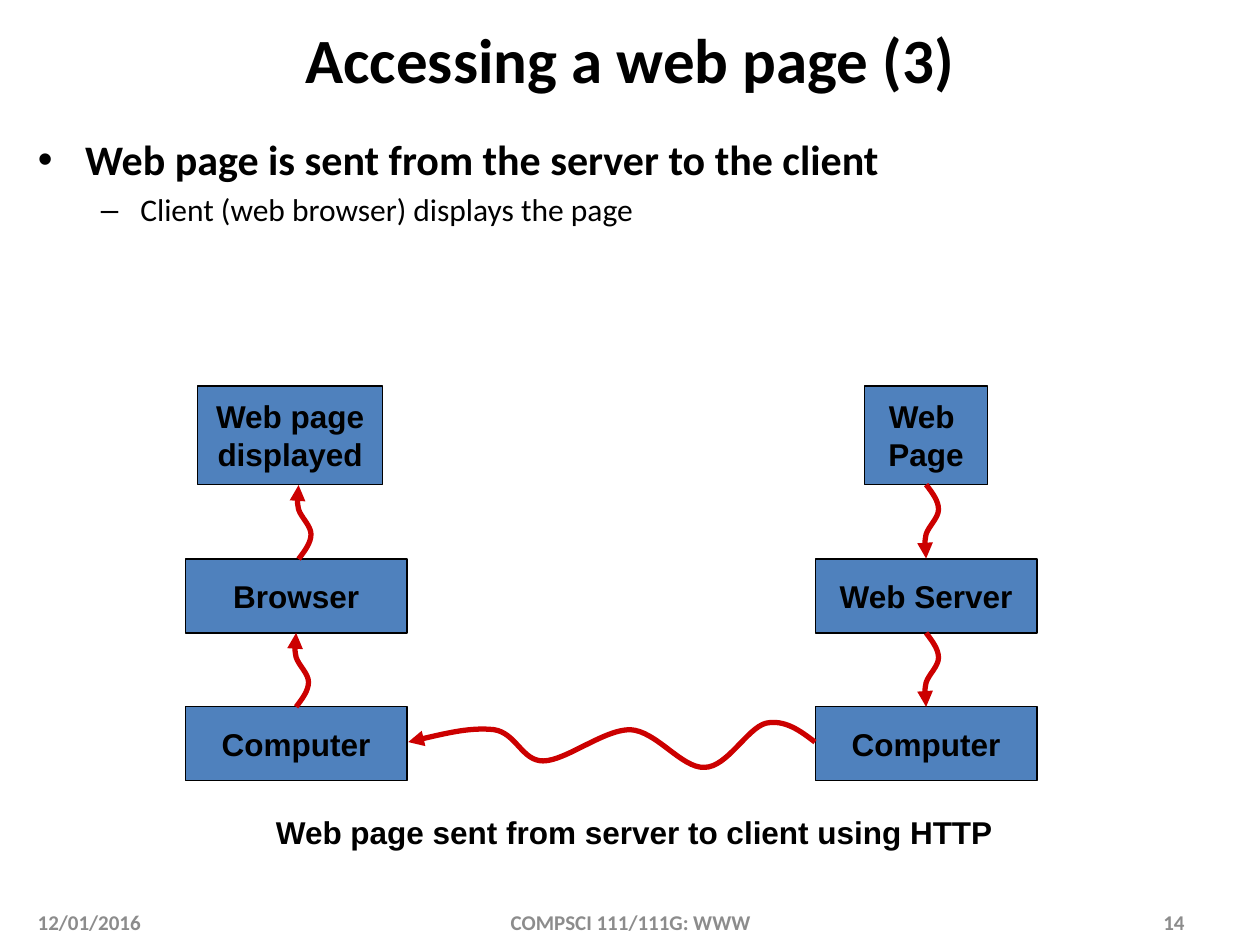
from lxml.etree import SubElement
from pptx import Presentation
from pptx.dml.color import RGBColor
from pptx.enum.shapes import MSO_SHAPE
from pptx.enum.text import MSO_ANCHOR, MSO_AUTO_SIZE, PP_ALIGN
from pptx.oxml.ns import qn
from pptx.util import Cm, Pt

THEME = {
    "ink": RGBColor(0x00, 0x00, 0x00),
    "muted": RGBColor(0x8C, 0x8C, 0x8C),
    "box": RGBColor(0x4F, 0x81, 0xBD),
    "arrow": RGBColor(0xCC, 0x00, 0x00),
    "outline": Pt(0.75),
    "stroke": Pt(3),
    "title": {"name": "Calibri", "size": Pt(36), "bold": True},
    "point": {"name": "Calibri", "size": Pt(24), "bold": True},
    "detail": {"name": "Calibri", "size": Pt(18), "bold": False},
    "label": {"name": "Arial", "size": Pt(18), "bold": True},
    "footer": {"name": "Calibri", "size": Pt(12), "bold": True},
}

TITLE = "Accessing a web page (3)"
POINTS = [
    (0, "point", "Web page is sent from the server to the client"),
    (1, "detail", "Client (web browser) displays the page"),
]
CAPTION = "Web page sent from server to client using HTTP"
FOOTERS = [
    ("12/01/2016", 0.51, 5.92, PP_ALIGN.LEFT),
    ("COMPSCI 111/111G: WWW", 8.69, 8.05, PP_ALIGN.CENTER),
    ("14", 18.21, 5.92, PP_ALIGN.RIGHT),
]

CLIENT_X, SERVER_X = 5.97, 18.67
PAGE_Y, SOFTWARE_Y, COMPUTER_Y = 7.78, 11.27, 14.25
PAGE_H, BOX_W, BOX_H = 1.99, 4.47, 1.49
BOXES = [
    ("Web page\vdisplayed", 5.85, PAGE_Y, 3.73, PAGE_H),
    ("Browser", CLIENT_X, SOFTWARE_Y, BOX_W, BOX_H),
    ("Computer", CLIENT_X, COMPUTER_Y, BOX_W, BOX_H),
    ("Web \vPage", SERVER_X, PAGE_Y, 2.49, PAGE_H),
    ("Web Server", SERVER_X, SOFTWARE_Y, BOX_W, BOX_H),
    ("Computer", SERVER_X, COMPUTER_Y, BOX_W, BOX_H),
]

DOWN, UP = 1, -1
SHORT_WAVE = [
    (0, 0),
    (0.13, 0.17), (0.25, 0.33), (0.25, 0.5),
    (0.25, 0.67), (0.05, 0.84), (0, 1),
    (-0.03, 1.16), (-0.03, 1.32), (0, BOX_H),
]
SHORT_ARROWS = [
    (CLIENT_X, COMPUTER_Y, UP),
    (6.02, SOFTWARE_Y, UP),
    (SERVER_X, PAGE_Y + PAGE_H, DOWN),
    (SERVER_X, SOFTWARE_Y + BOX_H, DOWN),
]
NETWORK_WAVE = [
    (16.43, 14.96),
    (16.13, 14.73), (15.82, 14.5), (15.44, 14.58),
    (15.06, 14.68), (14.66, 15.47), (14.2, 15.47),
    (13.74, 15.49), (13.23, 14.73), (12.7, 14.71),
    (12.17, 14.71), (11.4, 15.34), (10.95, 15.34),
    (10.52, 15.34), (10.41, 14.78), (9.96, 14.71),
    (9.5, 14.66), (8.86, 14.81), (8.23, 14.96),
]


def place(item, left, top, width, height):
    frame = {"left": left, "top": top, "width": width, "height": height}
    for side, length in frame.items():
        setattr(item, side, Cm(length))


def write(paragraph, words, style, color="ink", align=None):
    paragraph.text = words
    paragraph.alignment = align
    for attribute, value in THEME[style].items():
        setattr(paragraph.font, attribute, value)
    paragraph.font.color.rgb = THEME[color]


def add_box(slide, words, center, top, width, height):
    box = slide.shapes.add_shape(
        MSO_SHAPE.RECTANGLE, Cm(center - width / 2), Cm(top), Cm(width), Cm(height))
    box.shadow.inherit = False
    box.fill.solid()
    box.fill.fore_color.rgb = THEME["box"]
    box.line.color.rgb = THEME["ink"]
    box.line.width = THEME["outline"]
    box.text_frame.word_wrap = False
    box.text_frame.vertical_anchor = MSO_ANCHOR.MIDDLE
    write(box.text_frame.paragraphs[0], words, "label", align=PP_ALIGN.CENTER)


def add_wave(slide, controls):
    start, *rest = [(Cm(x), Cm(y)) for x, y in controls]
    builder = slide.shapes.build_freeform(*start)
    builder.add_line_segments(rest, close=False)
    wave = builder.convert_to_shape()
    wave.shadow.inherit = False
    wave.fill.background()
    wave.line.color.rgb = THEME["arrow"]
    wave.line.width = THEME["stroke"]
    SubElement(wave.line._get_or_add_ln(), qn("a:tailEnd"), type="triangle")

    outline = next(wave._element.iter(qn("a:path")))
    segments = outline.findall(qn("a:lnTo"))
    for first in range(0, len(segments), 3):
        curve = SubElement(outline, qn("a:cubicBezTo"))
        for segment in segments[first:first + 3]:
            curve.append(segment[0])
            outline.remove(segment)


def add_text(slide, words, frame, style, color, align, wrap, anchor):
    text = slide.shapes.add_textbox(*[Cm(length) for length in frame]).text_frame
    text.word_wrap = wrap
    text.vertical_anchor = anchor
    write(text.paragraphs[0], words, style, color, align)
    return text


def main():
    deck = Presentation()
    deck.slide_width, deck.slide_height = Cm(25.4), Cm(19.05)
    slide = deck.slides.add_slide(deck.slide_layouts[1])

    title, body = slide.placeholders
    place(title, 0.25, 0.3, 24.9, 1.75)
    title.text_frame.vertical_anchor = MSO_ANCHOR.MIDDLE
    write(title.text_frame.paragraphs[0], TITLE, "title", align=PP_ALIGN.CENTER)

    place(body, 0.51, 2.57, 24.38, 15.19)
    for index, (level, style, words) in enumerate(POINTS):
        points = body.text_frame
        paragraph = points.add_paragraph() if index else points.paragraphs[0]
        paragraph.level = level
        write(paragraph, words, style)
    for holder in (title, body):
        holder.text_frame.auto_size = MSO_AUTO_SIZE.NONE

    for box in BOXES:
        add_box(slide, *box)
    for x, y, direction in SHORT_ARROWS:
        add_wave(slide, [(x + dx, y + direction * dy) for dx, dy in SHORT_WAVE])
    add_wave(slide, NETWORK_WAVE)

    caption = add_text(slide, CAPTION, (5.31, 16.26, 14.96, 1.02), "label", "ink",
                       PP_ALIGN.CENTER, False, MSO_ANCHOR.TOP)
    caption.auto_size = MSO_AUTO_SIZE.SHAPE_TO_FIT_TEXT
    for words, left, width, align in FOOTERS:
        add_text(slide, words, (left, 18.24, width, 0.69), "footer", "muted",
                 align, True, MSO_ANCHOR.MIDDLE)

    deck.save("out.pptx")


if __name__ == "__main__":
    main()
